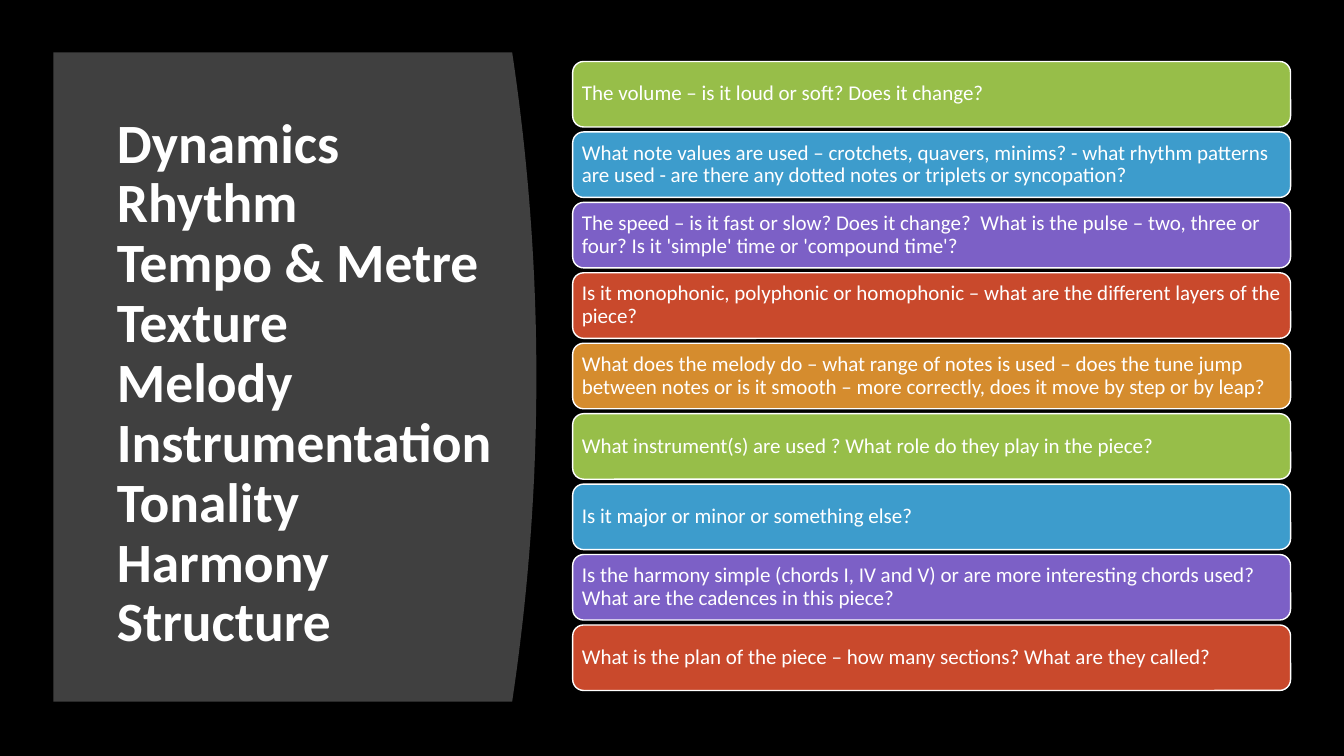
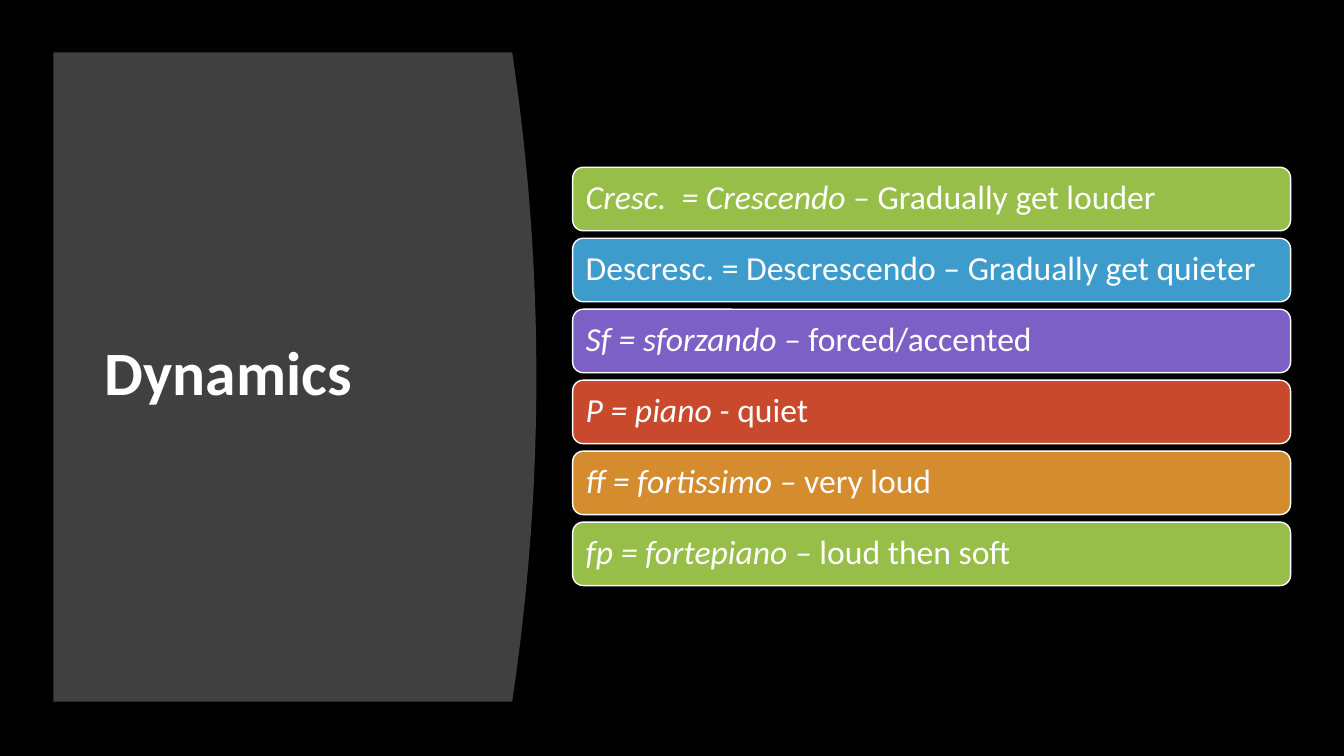
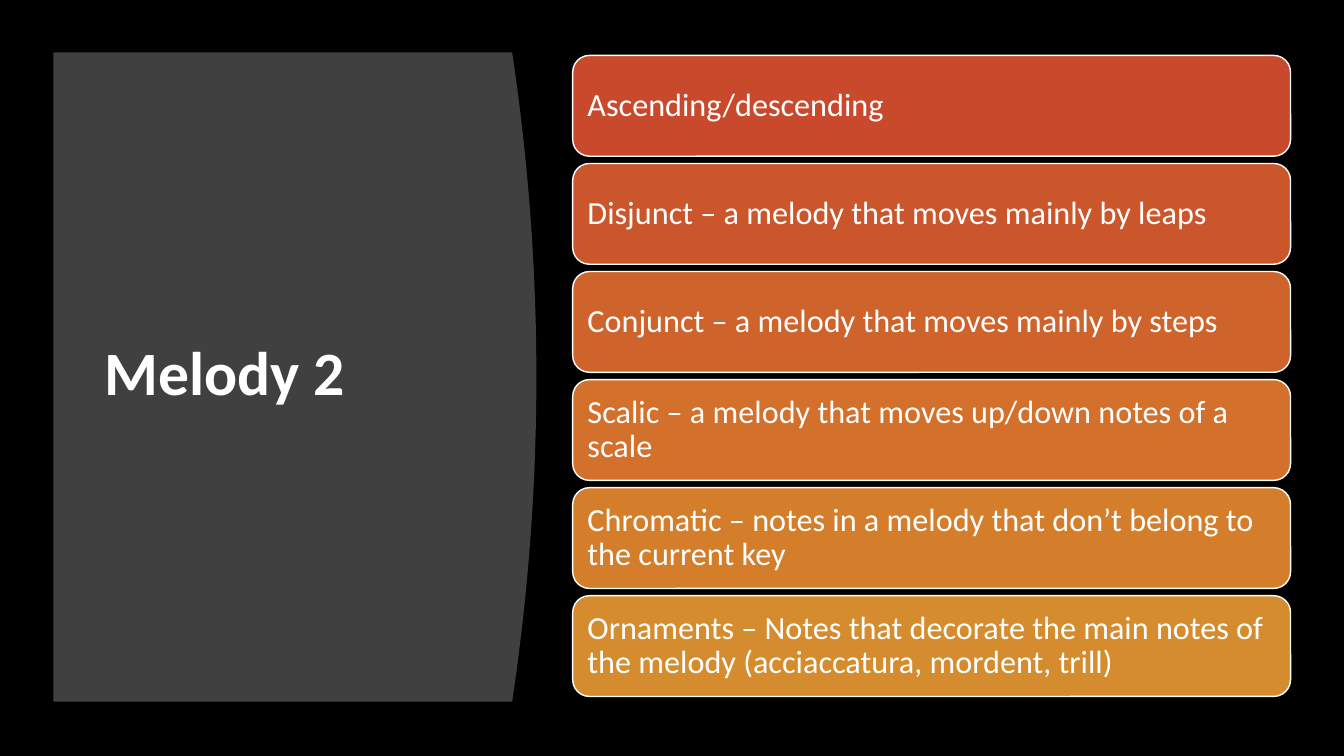
from dataclasses import dataclass
from itertools import cycle

from pptx import Presentation
from pptx.dml.color import RGBColor
from pptx.enum.shapes import MSO_SHAPE
from pptx.enum.text import MSO_ANCHOR, MSO_AUTO_SIZE, PP_ALIGN
from pptx.slide import Slide
from pptx.text.text import _Paragraph as Paragraph
from pptx.util import Inches, Pt


@dataclass(frozen=True)
class Theme:
    font: str = "Calibri"
    background: str = "000000"
    panel: str = "404040"
    text: str = "FFFFFF"
    accents: tuple[str, ...] = ("97BE49", "3D9CCC", "7C60C6", "C9492C", "D58C2E")
    warm_scale: tuple[str, ...] = ("C9492C", "CC562C", "CF632C", "D2702C", "D47E2C", "D58C2E")
    long_title_size: float = 39.6
    title_size: float = 44
    question_size: float = 15
    dynamics_size: float = 24
    melody_size: float = 23
    line_spacing: float = 0.9


THEME = Theme()


@dataclass(frozen=True)
class Box:
    left: float
    top: float
    width: float
    height: float


@dataclass(frozen=True)
class Bar:
    text: str
    term: str = ""


@dataclass(frozen=True)
class BarStack:
    first_top: float
    last_top: float
    bar_height: float
    inset: float
    text_size: float
    colours: tuple[str, ...]
    bars: tuple[Bar, ...]


@dataclass(frozen=True)
class Topic:
    title_lines: tuple[str, ...]
    title_box: Box
    title_size: float
    stack: BarStack


PANEL = Box(0.53, 0.52, 4.79, 6.44)
PANEL_BULGE = 0.24
CURVE_STEPS = 40
BAR_LEFT = 5.68
BAR_WIDTH = 7.12
SHORT_TITLE_BOX = Box(0.94, 1.11, 3.74, 5.24)

TOPICS = (
    Topic(
        ("Dynamics", "Rhythm", "Tempo & Metre", "Texture", "Melody",
         "Instrumentation", "Tonality", "Harmony", "Structure"),
        Box(1.06, 1.11, 4.14, 5.41),
        THEME.long_title_size,
        BarStack(0.61, 6.2, 0.65, 0.06, THEME.question_size, THEME.accents, (
            Bar("The volume – is it loud or soft? Does it change?"),
            Bar("What note values are used – crotchets, quavers, minims? - what rhythm patterns "
                "are used - are there any dotted notes or triplets or syncopation?"),
            Bar("The speed – is it fast or slow? Does it change?  What is the pulse – two, three "
                "or four? Is it 'simple' time or 'compound time'?"),
            Bar("Is it monophonic, polyphonic or homophonic – what are the different layers of "
                "the piece?"),
            Bar("What does the melody do – what range of notes is used – does the tune jump "
                "between notes or is it smooth – more correctly, does it move by step or by leap?"),
            Bar("What instrument(s) are used ? What role do they play in the piece?"),
            Bar("Is it major or minor or something else?"),
            Bar("Is the harmony simple (chords I, IV and V) or are more interesting chords used? "
                "What are the cadences in this piece?"),
            Bar("What is the plan of the piece – how many sections? What are they called?"),
        )),
    ),
    Topic(
        ("Dynamics",),
        SHORT_TITLE_BOX,
        THEME.title_size,
        BarStack(1.66, 5.18, 0.63, 0.1, THEME.dynamics_size, THEME.accents, (
            Bar("Gradually get louder", term="Cresc.  = Crescendo – "),
            Bar("Descresc. = Descrescendo – Gradually get quieter"),
            Bar("forced/accented", term="Sf = sforzando – "),
            Bar("quiet", term="P = piano - "),
            Bar("very loud", term="ff = fortissimo – "),
            Bar("loud then soft", term="fp = fortepiano – "),
        )),
    ),
    Topic(
        ("Melody 2",),
        SHORT_TITLE_BOX,
        THEME.title_size,
        BarStack(0.55, 5.91, 1, 0.1, THEME.melody_size, THEME.warm_scale, (
            Bar("Ascending/descending"),
            Bar("Disjunct – a melody that moves mainly by leaps"),
            Bar("Conjunct – a melody that moves mainly by steps"),
            Bar("Scalic – a melody that moves up/down notes of a scale"),
            Bar("Chromatic – notes in a melody that don’t belong to the current key"),
            Bar("Ornaments – Notes that decorate the main notes of the melody "
                "(acciaccatura, mordent, trill)"),
        )),
    ),
)


def colour(value: str) -> RGBColor:
    return RGBColor.from_string(value)


def add_run(paragraph: Paragraph, text: str, size: float,
            bold: bool = False, italic: bool = False) -> None:
    run = paragraph.add_run()
    run.text = text
    run.font.name = THEME.font
    run.font.size = Pt(size)
    run.font.bold = bold
    run.font.italic = italic
    run.font.color.rgb = colour(THEME.text)


def format_paragraph(paragraph: Paragraph) -> None:
    paragraph.alignment = PP_ALIGN.LEFT
    paragraph.line_spacing = THEME.line_spacing


def add_panel(slide: Slide) -> None:
    right = PANEL.left + PANEL.width
    points = []
    for step in range(CURVE_STEPS + 1):
        share = step / CURVE_STEPS
        curve_x = right - PANEL_BULGE * (2 * share - 1) ** 2
        points.append((Inches(curve_x), Inches(PANEL.top + PANEL.height * share)))
    points.append((Inches(PANEL.left), Inches(PANEL.top + PANEL.height)))
    builder = slide.shapes.build_freeform(Inches(PANEL.left), Inches(PANEL.top))
    builder.add_line_segments(points, close=True)
    panel = builder.convert_to_shape()
    panel.shadow.inherit = False
    panel.fill.solid()
    panel.fill.fore_color.rgb = colour(THEME.panel)
    panel.line.fill.background()
    slide.shapes.title.element.addprevious(panel.element)


def format_title(slide: Slide, topic: Topic) -> None:
    title = slide.shapes.title
    box = topic.title_box
    title.left, title.top = Inches(box.left), Inches(box.top)
    title.width, title.height = Inches(box.width), Inches(box.height)
    frame = title.text_frame
    frame.word_wrap = True
    frame.auto_size = MSO_AUTO_SIZE.NONE
    frame.vertical_anchor = MSO_ANCHOR.MIDDLE
    paragraph = frame.paragraphs[0]
    format_paragraph(paragraph)
    for index, line in enumerate(topic.title_lines):
        if index:
            paragraph.add_line_break()
        add_run(paragraph, line, topic.title_size, bold=True)


def add_bar(slide: Slide, bar: Bar, stack: BarStack, top: float, fill: str) -> None:
    shape = slide.shapes.add_shape(
        MSO_SHAPE.ROUNDED_RECTANGLE,
        Inches(BAR_LEFT), Inches(top), Inches(BAR_WIDTH), Inches(stack.bar_height))
    shape.shadow.inherit = False
    shape.fill.solid()
    shape.fill.fore_color.rgb = colour(fill)
    shape.line.color.rgb = colour(THEME.text)
    shape.line.width = Pt(1)
    frame = shape.text_frame
    frame.word_wrap = True
    frame.vertical_anchor = MSO_ANCHOR.MIDDLE
    frame.margin_left = frame.margin_right = Inches(stack.inset)
    frame.margin_top = frame.margin_bottom = Inches(stack.inset)
    paragraph = frame.paragraphs[0]
    format_paragraph(paragraph)
    if bar.term:
        add_run(paragraph, bar.term, stack.text_size, italic=True)
    add_run(paragraph, bar.text, stack.text_size)


def add_stack(slide: Slide, stack: BarStack) -> None:
    pitch = (stack.last_top - stack.first_top) / (len(stack.bars) - 1)
    for index, (bar, fill) in enumerate(zip(stack.bars, cycle(stack.colours))):
        add_bar(slide, bar, stack, stack.first_top + index * pitch, fill)


def main() -> None:
    presentation = Presentation()
    presentation.slide_width = Inches(13.33)
    presentation.slide_height = Inches(7.5)
    background = presentation.slide_master.background.fill
    background.solid()
    background.fore_color.rgb = colour(THEME.background)
    title_only = presentation.slide_layouts.get_by_name("Title Only")
    for topic in TOPICS:
        slide = presentation.slides.add_slide(title_only)
        add_panel(slide)
        format_title(slide, topic)
        add_stack(slide, topic.stack)
    presentation.save("out.pptx")


if __name__ == "__main__":
    main()
